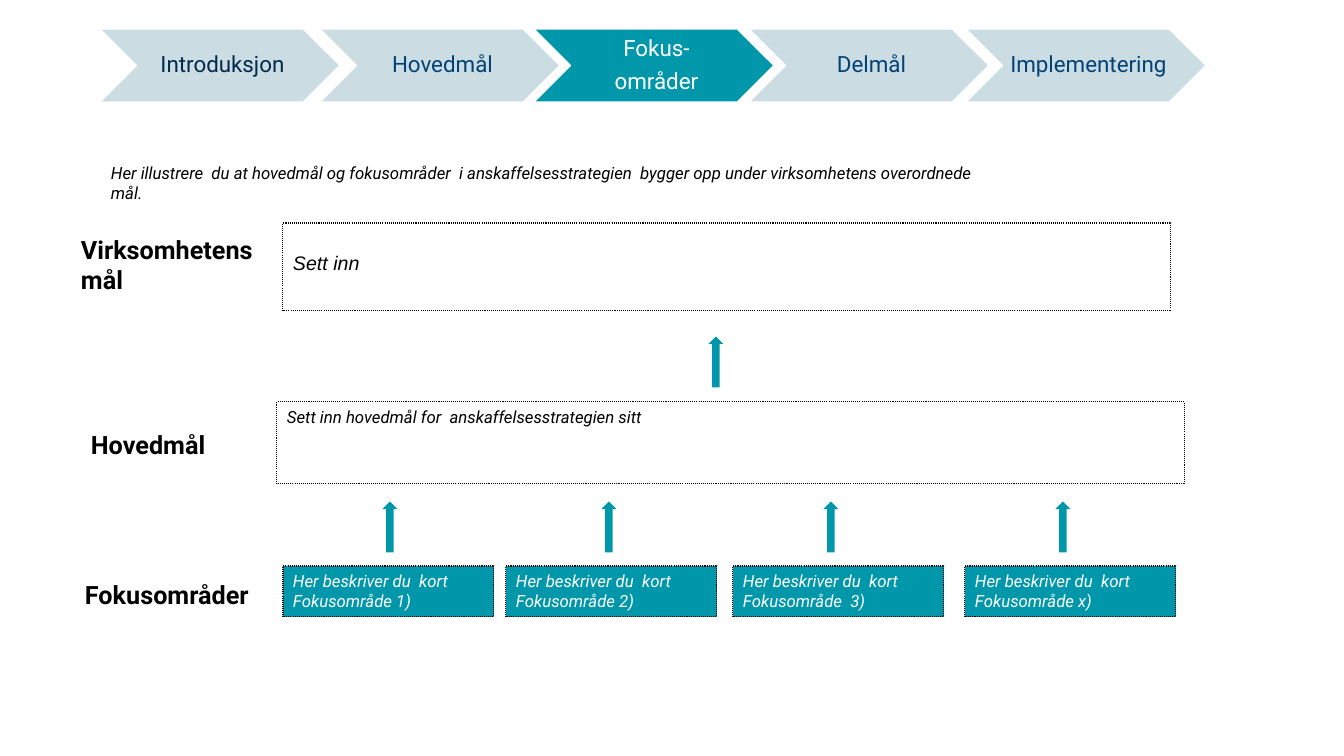
"""Builds the slide linking focus areas, main goal and the organisation's goals."""
from pptx import Presentation
from pptx.dml.color import RGBColor
from pptx.enum.dml import MSO_LINE
from pptx.enum.shapes import MSO_SHAPE as SHAPE
from pptx.enum.text import MSO_ANCHOR as ANCHOR, PP_ALIGN as ALIGN
from pptx.util import Emu, Pt

COLORS = {"teal": "0097AB", "pale": "CBDDE2", "navy": "012A4C", "blue": "024277",
          "black": "000000", "white": "FFFFFF"}
STEPS = [
    (100, ["Introduksjon"], "pale", "navy"),
    (320, ["Hovedmål"], "pale", "blue"),
    (534, ["Fokus-", "områder"], "teal", "white"),
    (749, ["Delmål"], "pale", "blue"),
    (966, ["Implementering"], "pale", "blue"),
]
INTRO = ("Her illustrere  du at hovedmål og fokusområder  i anskaffelsesstrategien  "
         "bygger opp under virksomhetens overordnede mål.")
ROW_LABELS = [
    (71, 229, 72, "Virksomhetens mål"),
    (81, 424, 40, "Hovedmål"),
    (75, 574, 40, "Fokusområder"),
]
GOALS = [
    ((283, 223, 888, 88), "Sett inn", dict(size=14, font="Arial", insets=(10, 28, 10, 5))),
    ((277, 402, 908, 82), "Sett inn hovedmål for  anskaffelsesstrategien sitt", {}),
]
FOCUS_INTRO = "Her beskriver du  kort"
FOCUS_AREAS = [
    (283, "Fokusområde 1)"),
    (506, "Fokusområde 2)"),
    (733, "Fokusområde  3)"),
    (965, "Fokusområde x)"),
]
ARROW_CENTRES = [(716, 362), (390, 527), (609, 527), (831, 527), (1063, 527)]
STEP_Y, STEP_W, STEP_H, STEP_INDENT = 29, 240, 73, 36
ARROW_W, ARROW_H = 51, 15


def px(n):
    return Emu(round(n * 914400 / 100.8))


def rgb(name):
    return RGBColor.from_string(COLORS[name])


def write(sp, lines, size=12, font="Roboto", color="black", bold=False, italic=False,
          align=ALIGN.LEFT, anchor=ANCHOR.TOP, insets=(10, 5, 10, 5), spacing=None, after=0):
    tf = sp.text_frame
    tf.word_wrap = True
    tf.vertical_anchor = anchor
    tf.margin_left, tf.margin_top, tf.margin_right, tf.margin_bottom = map(px, insets)
    for i, line in enumerate(lines):
        p = tf.paragraphs[0] if i == 0 else tf.add_paragraph()
        p.alignment, p.line_spacing, p.space_after = align, spacing, Pt(after)
        r = p.add_run()
        r.text = line
        f = r.font
        f.size, f.name, f.bold, f.italic = Pt(size), font, bold, italic
        f.color.rgb = rgb(color)


def add_shape(s, kind, box, fill=None, line=None, width=0.75, dash=None):
    sp = s.shapes.add_shape(kind, *map(px, box))
    sp.shadow.inherit = False
    if fill:
        sp.fill.solid()
        sp.fill.fore_color.rgb = rgb(fill)
    else:
        sp.fill.background()
    if line:
        sp.line.color.rgb = rgb(line)
        sp.line.width = Pt(width)
        sp.line.dash_style = dash
    else:
        sp.line.fill.background()
    return sp


def add_text(s, box, lines, **fmt):
    write(s.shapes.add_textbox(*map(px, box)), lines, **fmt)


def add_box(s, box, lines, fill=None, **fmt):
    sp = add_shape(s, SHAPE.RECTANGLE, box, fill, "black", dash=MSO_LINE.ROUND_DOT)
    write(sp, lines, italic=True, **fmt)


def main():
    prs = Presentation()
    prs.slide_width, prs.slide_height = px(1344), px(756)
    s = prs.slides.add_slide(prs.slide_layouts[6])

    for x, lines, fill, color in STEPS:
        add_shape(s, SHAPE.CHEVRON, (x, STEP_Y, STEP_W, STEP_H), fill, "white", width=1)
        add_text(s, (x + STEP_INDENT, STEP_Y, STEP_W - 2 * STEP_INDENT, STEP_H), lines,
                 size=16, color=color, align=ALIGN.CENTER, anchor=ANCHOR.MIDDLE,
                 insets=(7, 2, 2, 2), spacing=0.9, after=6)

    add_text(s, (101, 158, 888, 30), [INTRO], italic=True)
    for x, y, h, label in ROW_LABELS:
        add_text(s, (x, y, 197, h), [label], size=18, bold=True)
    for box, text, fmt in GOALS:
        add_box(s, box, [text], **fmt)
    for x, area in FOCUS_AREAS:
        add_box(s, (x, 566, 211, 51), [FOCUS_INTRO, area], fill="teal", color="white")
    for cx, cy in ARROW_CENTRES:
        arrow = add_shape(s, SHAPE.RIGHT_ARROW,
                          (cx - ARROW_W / 2, cy - ARROW_H / 2, ARROW_W, ARROW_H), "teal")
        arrow.rotation = 270

    prs.save("out.pptx")


if __name__ == "__main__":
    main()
